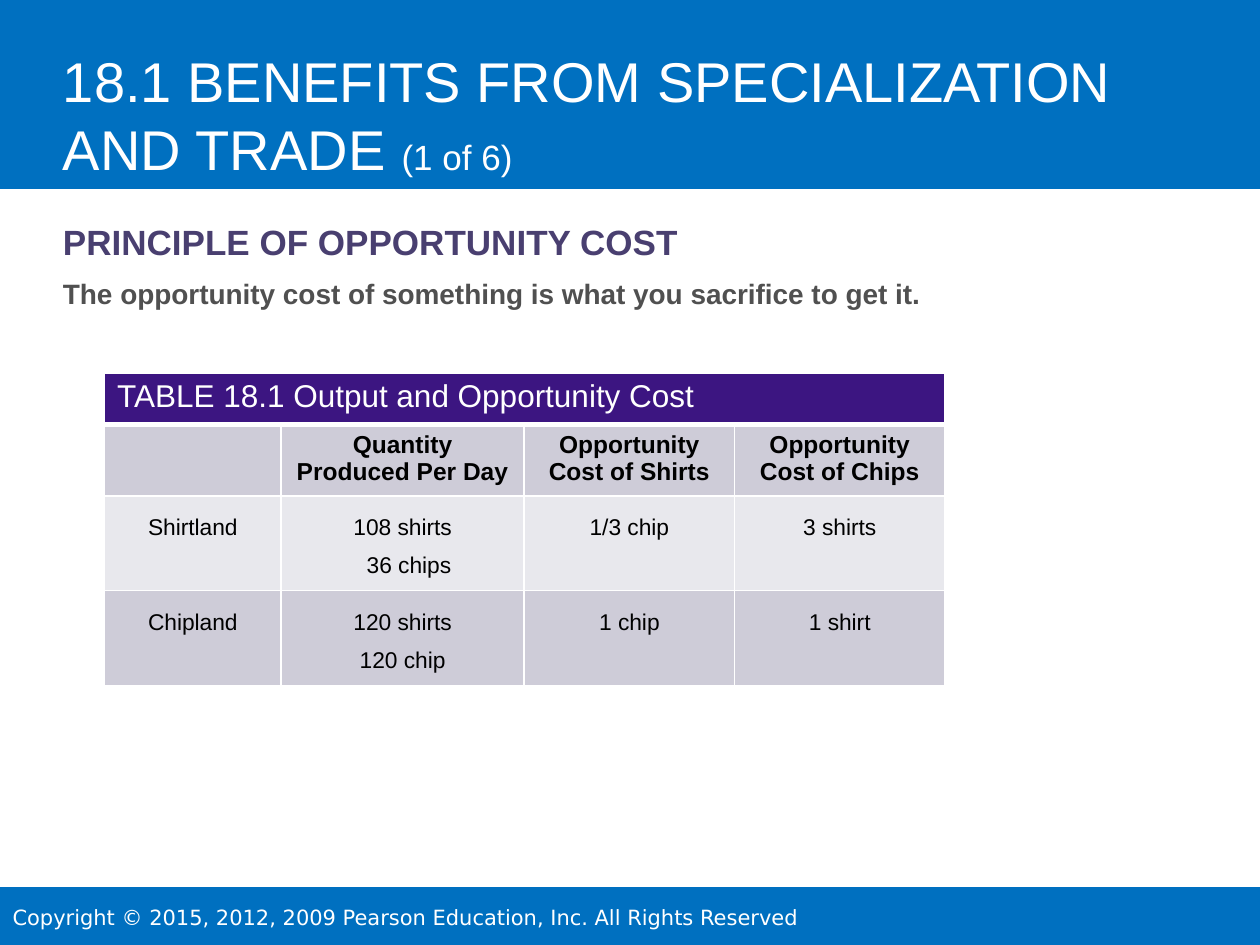
from lxml import etree
from pptx import Presentation, util as u
from pptx.dml.color import RGBColor
from pptx.enum import shapes, text
from pptx.oxml import ns

COLS, ROWS = 100, 75
WIDTH, HEIGHT = u.Inches(10), u.Inches(7.5)
COLORS = {
    "band": "0070C0", "white": "FFFFFF", "black": "000000",
    "heading": "493F70", "body": "505050", "caption": "3C1581",
    "dark_row": "CECCD8", "light_row": "E8E8ED",
}
HEADERS = ["", "Quantity Produced Per Day", "Opportunity Cost of Shirts", "Opportunity Cost of Chips"]
OUTPUT = [
    ["Shirtland", "108 shirts\n36 chips", "1/3 chip", "3 shirts"],
    ["Chipland", "120 shirts\n120 chip", "1 chip", "1 shirt"],
]


def rgb(name):
    """Return a palette colour."""
    return RGBColor.from_string(COLORS[name])


def grid(x, y, w, h):
    """Convert grid columns and rows to slide lengths."""
    return [int(v) for v in (x * WIDTH / COLS, y * HEIGHT / ROWS, w * WIDTH / COLS, h * HEIGHT / ROWS)]


def add_run(p, words, size, color, bold=False, font="Arial"):
    """Append one formatted run to a paragraph."""
    r = p.add_run()
    r.text = words
    r.font.name, r.font.size, r.font.bold = font, u.Pt(size), bold
    r.font.color.rgb = rgb(color)


def add_band(s, box):
    """Draw a plain coloured band."""
    sp = s.shapes.add_shape(shapes.MSO_SHAPE.RECTANGLE, *grid(*box))
    sp.shadow.inherit = False
    sp.fill.solid()
    sp.fill.fore_color.rgb = rgb("band")
    sp.line.fill.background()


def add_text(s, box, anchor):
    """Add a wrapping text box without insets and return its frame."""
    tf = s.shapes.add_textbox(*grid(*box)).text_frame
    tf.word_wrap = True
    tf.vertical_anchor = anchor
    tf.margin_left = tf.margin_right = tf.margin_top = tf.margin_bottom = 0
    return tf


def add_header(s, box):
    """Place the title on its band."""
    x, y, w, h = box
    add_band(s, box)
    p = add_text(s, (x + 5, y + 2.4, w - 10, h - 3), text.MSO_ANCHOR.BOTTOM).paragraphs[0]
    add_run(p, "18.1 BENEFITS FROM SPECIALIZATION AND TRADE ", 32, "white")
    add_run(p, "(1 of 6)", 20, "white")


def add_footer(s, box):
    """Place the copyright line on its band."""
    x, y, w, h = box
    add_band(s, box)
    p = add_text(s, (x + 1, y + 0.1, 69, h), text.MSO_ANCHOR.MIDDLE).paragraphs[0]
    add_run(p, "Copyright © 2015, 2012, 2009 Pearson Education, Inc. All Rights Reserved",
            12, "white", font="DejaVu Sans")


def add_principle(s, box):
    """Place the heading and its statement."""
    tf = add_text(s, box, text.MSO_ANCHOR.TOP)
    add_run(tf.paragraphs[0], "PRINCIPLE OF OPPORTUNITY COST", 20, "heading", True)
    p = tf.add_paragraph()
    p.space_before = u.Pt(8)
    add_run(p, "The opportunity cost of something is what you sacrifice to get it.", 16, "body", True)


def style_cell(cell, fill, bottom=1):
    """Give a cell its white borders and its fill."""
    props = cell._tc.get_or_add_tcPr()
    for side, points in (("L", 1), ("R", 1), ("T", 1), ("B", bottom)):
        ln = etree.SubElement(props, ns.qn(f"a:ln{side}"), w=str(u.Pt(points)))
        paint = etree.SubElement(ln, ns.qn("a:solidFill"))
        etree.SubElement(paint, ns.qn("a:srgbClr"), val=COLORS["white"])
    cell.fill.solid()
    cell.fill.fore_color.rgb = rgb(fill)


def fill_cell(cell, words, size, bold, spacing):
    """Write centred lines into a cell."""
    tf = cell.text_frame
    for i, line in enumerate(words.split("\n")):
        p = tf.add_paragraph() if i else tf.paragraphs[0]
        p.alignment = text.PP_ALIGN.CENTER
        p.line_spacing = spacing
        if line == "36 chips":
            p._p.get_or_add_pPr().set("marL", str(u.Inches(0.1)))
        if line:
            add_run(p, line, size, "black", bold)


def add_output_table(s, box):
    """Build the captioned table of output and opportunity cost."""
    table = s.shapes.add_table(2 + len(OUTPUT), len(HEADERS), *grid(*box)).table
    for column, width in zip(table.columns, (14, 19.3, 16.7, 16.7)):
        column.width = grid(0, 0, width, 0)[2]
    for row, height in zip(table.rows, (4.1, 5.2, 7.1, 7)):
        row.height = grid(0, 0, 0, height)[3]
    for c in range(len(HEADERS)):
        style_cell(table.cell(0, c), "caption", 3)
    table.cell(0, 0).merge(table.cell(0, len(HEADERS) - 1))
    add_run(table.cell(0, 0).text_frame.paragraphs[0],
            "TABLE 18.1 Output and Opportunity Cost", 18, "white")
    for r, values in enumerate([HEADERS] + OUTPUT, 1):
        look = (14, True, 1.0) if r == 1 else (13, False, 1.5)
        for c, words in enumerate(values):
            cell = table.cell(r, c)
            style_cell(cell, "dark_row" if r % 2 else "light_row")
            fill_cell(cell, words, *look)


def main():
    """Build and save the slide."""
    prs = Presentation()
    prs.slide_width, prs.slide_height = WIDTH, HEIGHT
    s = prs.slides.add_slide(prs.slide_layouts[6])
    add_header(s, (0, 0, COLS, 15))
    add_footer(s, (0, 70.4, COLS, 4.6))
    add_principle(s, (5, 17.5, 90, 49.5))
    add_output_table(s, (8.3, 29.6, 66.7, 23.4))
    prs.save("out.pptx")


if __name__ == "__main__":
    main()
